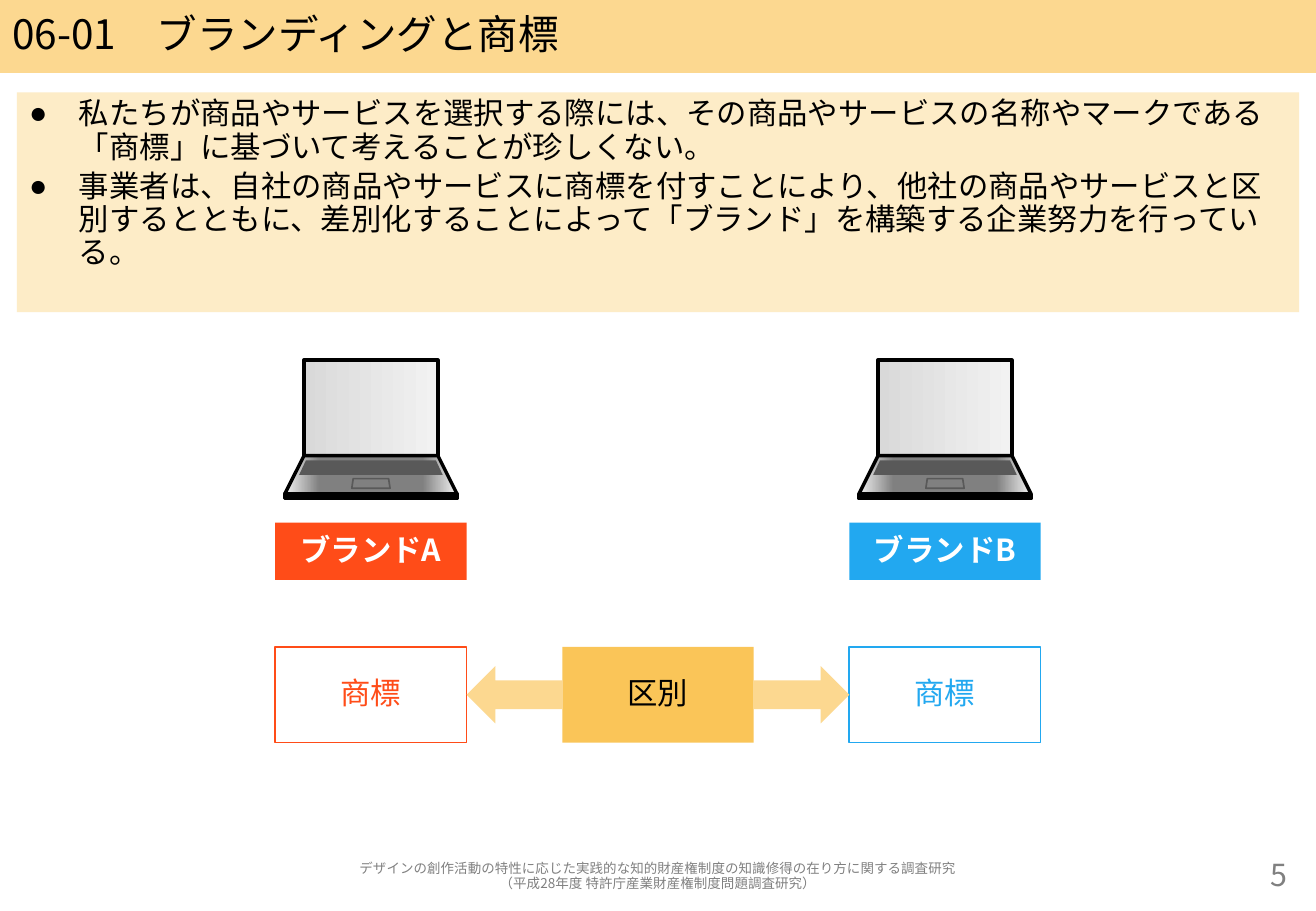
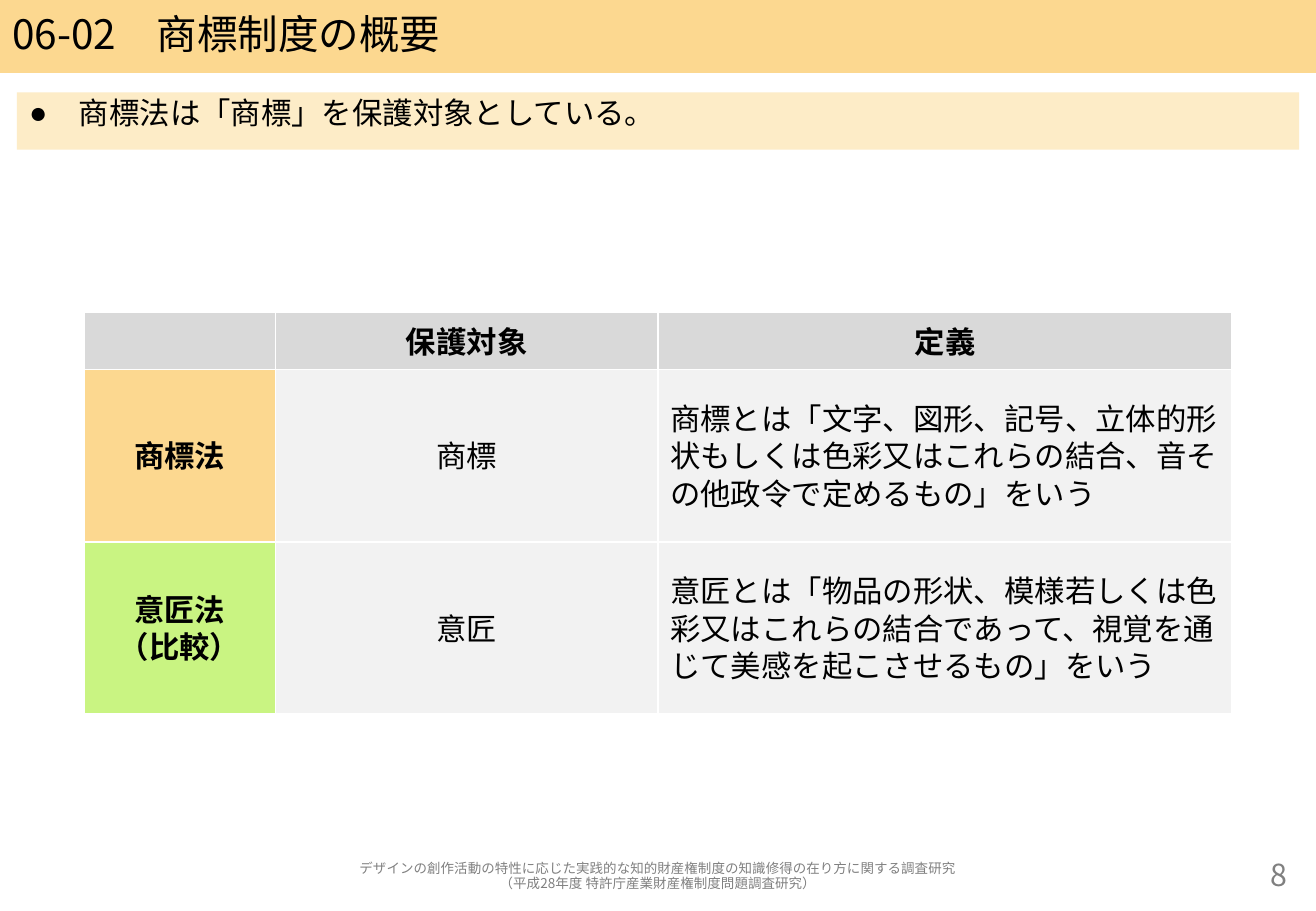
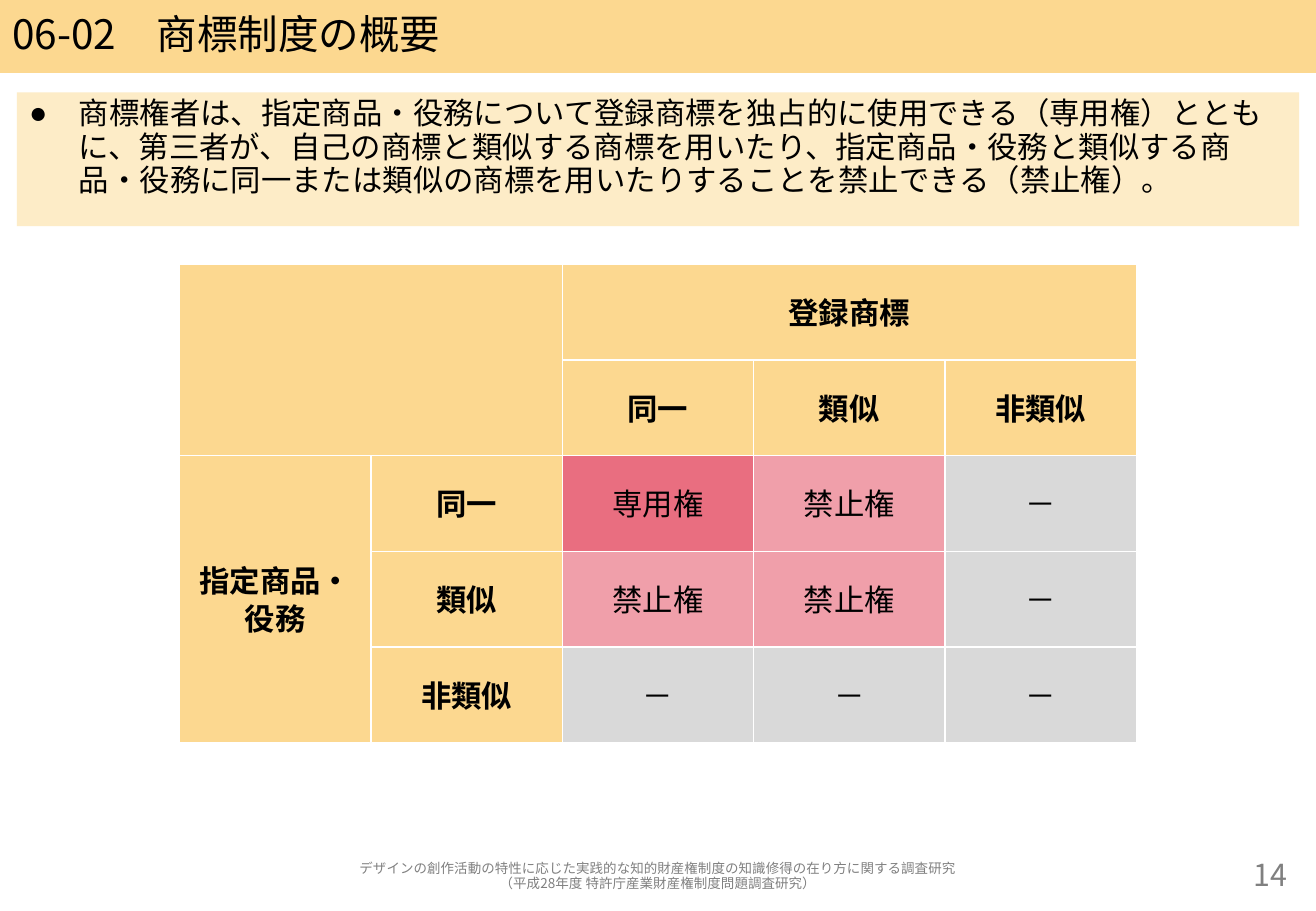
from dataclasses import dataclass
from typing import NamedTuple

from lxml import etree
from pptx import Presentation
from pptx.dml.color import RGBColor
from pptx.enum.shapes import MSO_SHAPE
from pptx.enum.text import MSO_ANCHOR, MSO_AUTO_SIZE, PP_ALIGN
from pptx.oxml.ns import qn
from pptx.util import Cm, Inches, Pt

RECT, TRAPEZOID = MSO_SHAPE.RECTANGLE, MSO_SHAPE.TRAPEZOID
ARROW_LEFT, ARROW_RIGHT = MSO_SHAPE.LEFT_ARROW, MSO_SHAPE.RIGHT_ARROW
LEFT, CENTER, RIGHT = PP_ALIGN.LEFT, PP_ALIGN.CENTER, PP_ALIGN.RIGHT
TOP, MIDDLE = MSO_ANCHOR.TOP, MSO_ANCHOR.MIDDLE
NO_FIT = MSO_AUTO_SIZE.NONE


@dataclass(frozen=True)
class Theme:
    font: str = "Noto Sans CJK JP"
    table_font: str = "Arial"
    title_size: float = 24
    text_size: float = 18
    footer_size: float = 8
    line_spacing: float = 0.91
    table_spacing: float = 1.1
    ink: str = "000000"
    white: str = "FFFFFF"
    muted: str = "808080"
    band: str = "FCD890"
    panel: str = "FDECC7"
    accent: str = "FAC558"
    red: str = "FF4C18"
    blue: str = "22A8F0"
    green: str = "C9F482"
    gray: str = "D9D9D9"
    pale: str = "F2F2F2"
    dark: str = "595959"
    rose: str = "E96E80"
    pink: str = "F09FAA"


T = Theme()
SLIDE_W, SLIDE_H = Inches(10.83), Inches(7.5)
UNIT = Cm(0.4)
COLUMNS = 67
ORIGIN_X = (SLIDE_W - COLUMNS * UNIT) // 2
ORIGIN_Y = Inches(0.76)
FOOTER_ROW = 40
FOOTER = (
    "デザインの創作活動の特性に応じた実践的な知的財産権制度の知識修得の在り方に関する調査研究\n"
    "（平成28年度 特許庁産業財産権制度問題調査研究）"
)


class Box(NamedTuple):
    col: float
    row: float
    cols: float
    rows: float

    def emu(self) -> tuple[int, int, int, int]:
        return (
            ORIGIN_X + round(self.col * UNIT),
            ORIGIN_Y + round(self.row * UNIT),
            round(self.cols * UNIT),
            round(self.rows * UNIT),
        )


class Part(NamedTuple):
    kind: MSO_SHAPE
    box: Box
    fill: str | tuple
    line: str | None = None
    width: float = 1
    adjust: float | None = None


class Brand(NamedTuple):
    name: str
    color: str
    col: float


class Cell(NamedTuple):
    text: str
    fill: str
    bold: bool = False
    align: PP_ALIGN = CENTER
    span: tuple[int, int] = (1, 1)


SCREEN_FILL = ((0, T.gray), (100, T.pale))
KEYBOARD_FILL = ((0, T.pale), (20, T.muted), (80, T.muted), (100, T.pale))
LAPTOP = (
    Part(RECT, Box(1.5, 14, 7, 5), SCREEN_FILL, T.ink, 2),
    Part(TRAPEZOID, Box(0.5, 19, 9, 2), KEYBOARD_FILL, T.ink, 2, 0.5),
    Part(RECT, Box(0.5, 21, 9, 0.25), T.ink, T.ink, 2),
    Part(TRAPEZOID, Box(1.25, 19.25, 7.5, 0.75), T.dark, adjust=0.47),
    Part(TRAPEZOID, Box(4, 20.2, 2, 0.5), T.muted, T.dark, adjust=0.15),
)
BRANDS = (Brand("ブランドA", T.red, 13.5), Brand("ブランドB", T.blue, 43.5))


def rgb(color: str) -> RGBColor:
    return RGBColor.from_string(color)


def add_text(tf, text: str, *, size: float = T.text_size, color: str = T.ink,
             font: str = T.font, bold: bool = False, align: PP_ALIGN = LEFT,
             spacing: float = T.line_spacing, bullet: bool = False) -> None:
    for i, line in enumerate(text.split("\n")):
        p = tf.paragraphs[0] if i == 0 else tf.add_paragraph()
        p.alignment, p.line_spacing = align, spacing
        p.space_before = Pt(size * 0.2 if bullet else 0)
        if bullet:
            pPr = p._p.get_or_add_pPr()
            pPr.set("marL", str(Inches(0.41)))
            pPr.set("indent", str(-Inches(0.41)))
            etree.SubElement(pPr, qn("a:buChar")).set("char", "●")
        r = p.add_run()
        r.text = line
        r.font.name, r.font.size, r.font.bold = font, Pt(size), bold
        r.font.color.rgb = rgb(color)
        etree.SubElement(r._r.get_or_add_rPr(), qn("a:ea")).set("typeface", font)


def set_fill(sp, fill: str | tuple | None) -> None:
    if fill is None:
        sp.fill.background()
    elif isinstance(fill, str):
        sp.fill.solid()
        sp.fill.fore_color.rgb = rgb(fill)
    else:
        sp.fill.gradient()
        sp.fill.gradient_angle = 0
        stops = sp._element.spPr.find(".//" + qn("a:gsLst"))
        for stop in list(stops):
            stops.remove(stop)
        for percent, color in fill:
            stop = etree.SubElement(stops, qn("a:gs"), pos=str(percent * 1000))
            etree.SubElement(stop, qn("a:srgbClr"), val=color)


def add_part(slide, part: Part, offset: float = 0):
    box = part.box._replace(col=part.box.col + offset)
    sp = slide.shapes.add_shape(part.kind, *box.emu())
    sp.shadow.inherit = False
    set_fill(sp, part.fill)
    if part.line:
        sp.line.color.rgb = rgb(part.line)
        sp.line.width = Pt(part.width)
    else:
        sp.line.fill.background()
    if part.adjust is not None:
        sp.adjustments[0] = part.adjust
    return sp


def add_label(slide, box: Box, text: str, *, fill: str | None = None,
              line: str | None = None, color: str = T.ink, bold: bool = False) -> None:
    sp = add_part(slide, Part(RECT, box, fill, line))
    sp.text_frame.vertical_anchor = MIDDLE
    add_text(sp.text_frame, text, color=color, bold=bold, align=CENTER)


def add_note(slide, box: Box, text: str, size: float, align: PP_ALIGN) -> None:
    tf = slide.shapes.add_textbox(*box.emu()).text_frame
    tf.word_wrap, tf.vertical_anchor = True, MIDDLE
    add_text(tf, text, size=size, color=T.muted, align=align)


def fill_placeholder(sp, frame: tuple, fill: str, anchor: MSO_ANCHOR, text: str, **fmt) -> None:
    sp.left, sp.top, sp.width, sp.height = frame
    set_fill(sp, fill)
    tf = sp.text_frame
    tf.auto_size, tf.word_wrap, tf.vertical_anchor = NO_FIT, True, anchor
    add_text(tf, text, **fmt)


def add_page(prs, title: str, body: str, body_rows: float, number: int):
    slide = prs.slides.add_slide(prs.slide_layouts[1])
    fill_placeholder(slide.shapes.title, (0, 0, SLIDE_W, Inches(0.6)), T.band, MIDDLE,
                     title, size=T.title_size)
    fill_placeholder(slide.placeholders[1], Box(0, 0, COLUMNS, body_rows).emu(), T.panel, TOP,
                     body, bullet=True)
    add_note(slide, Box(COLUMNS - 8.5, FOOTER_ROW, 8.5, 2), str(number), T.text_size, RIGHT)
    add_note(slide, Box(0, FOOTER_ROW, COLUMNS, 2), FOOTER, T.footer_size, CENTER)
    return slide


def set_borders(cell) -> None:
    tcPr = cell._tc.get_or_add_tcPr()
    for i, side in enumerate(("lnL", "lnR", "lnT", "lnB")):
        ln = etree.Element(qn(f"a:{side}"), w=str(Pt(1)))
        fill = etree.SubElement(ln, qn("a:solidFill"))
        etree.SubElement(fill, qn("a:srgbClr"), val=T.white)
        tcPr.insert(i, ln)


def add_grid(slide, row: float, cols: list[float], rows: list[float],
             cells: list[list[Cell | None]]) -> None:
    box = Box((COLUMNS - sum(cols)) / 2, row, sum(cols), sum(rows))
    table = slide.shapes.add_table(len(rows), len(cols), *box.emu()).table
    table.horz_banding = table.first_row = False
    for column, width in zip(table.columns, cols):
        column.width = round(width * UNIT)
    for line, height in zip(table.rows, rows):
        line.height = round(height * UNIT)
    for i, items in enumerate(cells):
        for j, item in enumerate(items):
            cell = table.cell(i, j)
            set_borders(cell)
            if item is None:
                continue
            set_fill(cell, item.fill)
            cell.vertical_anchor = MIDDLE
            if item.text:
                add_text(cell.text_frame, item.text, font=T.table_font, bold=item.bold,
                         align=item.align, spacing=T.table_spacing)
            if item.span != (1, 1):
                cell.merge(table.cell(i + item.span[0] - 1, j + item.span[1] - 1))


def head(text: str, fill: str = T.band, span: tuple[int, int] = (1, 1)) -> Cell:
    return Cell(text, fill, True, span=span)


def branding_slide(prs) -> None:
    slide = add_page(
        prs, "06-01　ブランディングと商標",
        "私たちが商品やサービスを選択する際には、その商品やサービスの名称やマークである「商標」に基づいて考えることが珍しくない。\n"
        "事業者は、自社の商品やサービスに商標を付すことにより、他社の商品やサービスと区別するとともに、差別化することによって「ブランド」を構築する企業努力を行っている。",
        11.5, 5)
    for brand in BRANDS:
        for part in LAPTOP:
            add_part(slide, part, brand.col)
        add_label(slide, Box(brand.col, 22.5, 10, 3), brand.name,
                  fill=brand.color, color=T.white, bold=True)
        add_label(slide, Box(brand.col, 29, 10, 5), "商標", line=brand.color, color=brand.color)
    add_label(slide, Box(28.5, 29, 10, 5), "区別", fill=T.accent)
    for kind, col in ((ARROW_RIGHT, 38.5), (ARROW_LEFT, 23.5)):
        add_part(slide, Part(kind, Box(col, 30, 5, 3), T.band))


def definition_slide(prs) -> None:
    slide = add_page(prs, "06-02　商標制度の概要", "商標法は「商標」を保護対象としている。", 3, 8)
    laws = (
        ("商標法", T.band, "商標",
         "商標とは「文字、図形、記号、立体的形状もしくは色彩又はこれらの結合、音その他政令で定めるもの」をいう"),
        ("意匠法\n（比較）", T.green, "意匠",
         "意匠とは「物品の形状、模様若しくは色彩又はこれらの結合であって、視覚を通じて美感を起こさせるもの」をいう"),
    )
    cells = [[head(text, T.gray) for text in ("", "保護対象", "定義")]]
    for law, fill, target, meaning in laws:
        cells.append([head(law, fill), Cell(target, T.pale), Cell(meaning, T.pale, align=LEFT)])
    add_grid(slide, 11.5, [10, 20, 30], [3, 9, 9], cells)


def rights_slide(prs) -> None:
    slide = add_page(
        prs, "06-02　商標制度の概要",
        "商標権者は、指定商品・役務について登録商標を独占的に使用できる（専用権）とともに、第三者が、自己の商標と類似する商標を用いたり、指定商品・役務と類似する商品・役務に同一または類似の商標を用いたりすることを禁止できる（禁止権）。",
        7, 14)
    levels = ("同一", "類似", "非類似")
    fills = {"専用権": T.rose, "禁止権": T.pink, "－": T.gray}
    rights = (("専用権", "禁止権", "－"), ("禁止権", "禁止権", "－"), ("－", "－", "－"))
    cells = [
        [head("", span=(2, 2)), None, head("登録商標", span=(1, 3)), None, None],
        [None, None, *(head(level) for level in levels)],
    ]
    for i, (level, row) in enumerate(zip(levels, rights)):
        group = head("指定商品・役務", span=(3, 1)) if i == 0 else None
        cells.append([group, head(level), *(Cell(right, fills[right]) for right in row)])
    add_grid(slide, 9, [10] * 5, [5] * 5, cells)


def main() -> None:
    prs = Presentation()
    prs.slide_width, prs.slide_height = SLIDE_W, SLIDE_H
    branding_slide(prs)
    definition_slide(prs)
    rights_slide(prs)
    prs.save("out.pptx")


if __name__ == "__main__":
    main()
